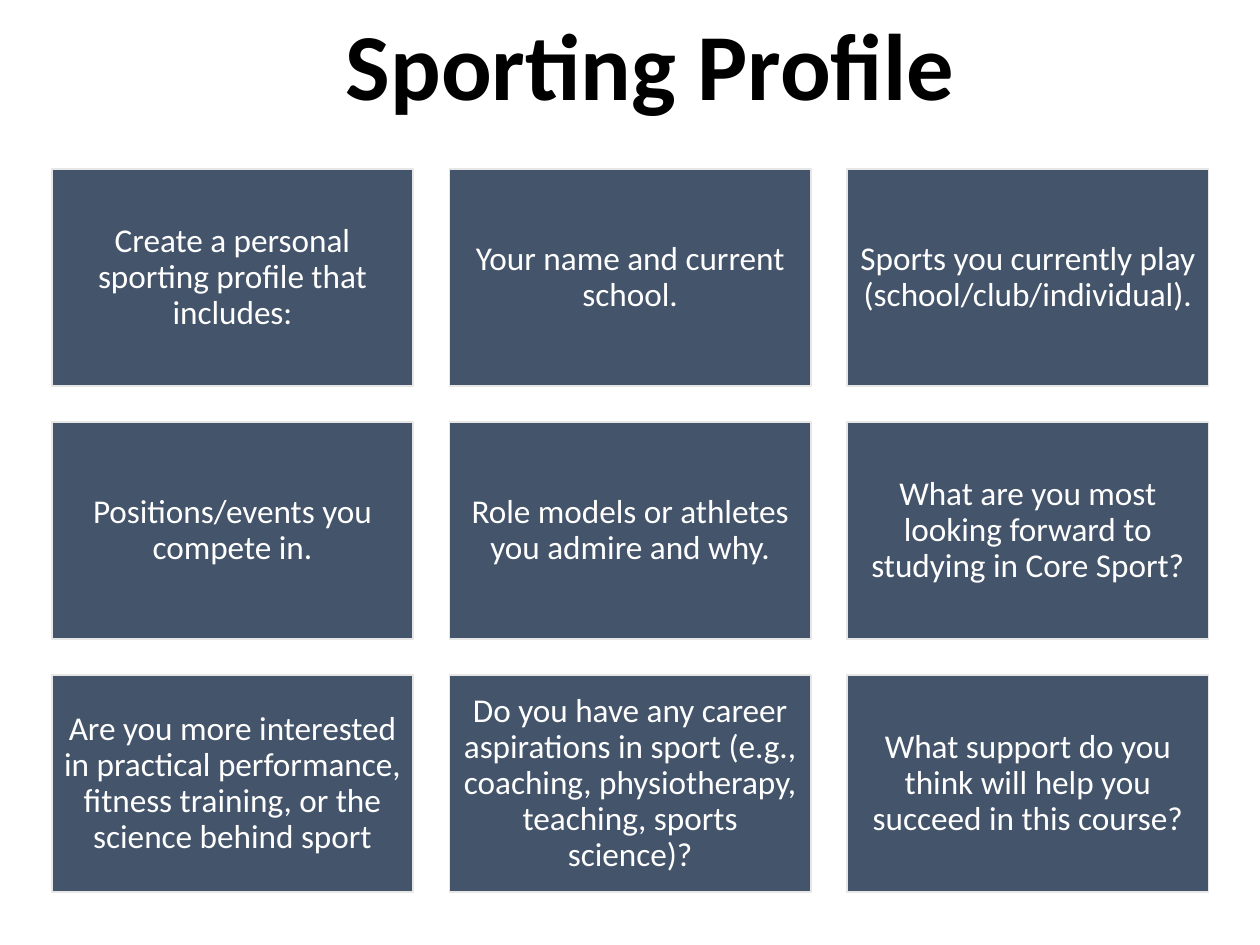
from pptx import Presentation
from pptx.dml.color import RGBColor
from pptx.enum import shapes, text
from pptx.util import Pt

SLATE = RGBColor(0x44, 0x54, 0x6A)
PALE = RGBColor(0xE7, 0xE6, 0xE6)
WHITE = RGBColor(0xFF, 0xFF, 0xFF)
BLACK = RGBColor(0x00, 0x00, 0x00)

COLUMNS, ROWS, GAP = 3, 3, 20.7
PROMPTS = [
    "Create a personal sporting profile that includes:",
    "Your name and current school.",
    "Sports you currently play (school/club/individual).",
    "Positions/events you compete in.",
    "Role models or athletes you admire and why.",
    "What are you most looking forward to studying in Core Sport?",
    "Are you more interested in practical performance, fitness training, "
    "or the science behind sport",
    "Do you have any career aspirations in sport (e.g., coaching, "
    "physiotherapy, teaching, sports science)?",
    "What support do you think will help you succeed in this course?",
]


def set_values(target, values):
    for name, value in values.items():
        setattr(target, name, value)


def write_text(frame, wording, color, font_values):
    frame.word_wrap = True
    para = frame.paragraphs[0]
    para.alignment = text.PP_ALIGN.CENTER
    span = para.add_run()
    span.text = wording
    set_values(span.font, {"name": "Calibri", **font_values})
    span.font.color.rgb = color
    return para


def add_title(page, left, top, width, height):
    box = page.shapes.add_textbox(Pt(left), Pt(top), Pt(width), Pt(height))
    write_text(box.text_frame, "Sporting Profile", BLACK,
               {"size": Pt(54), "bold": True})
    box.text_frame.auto_size = text.MSO_AUTO_SIZE.SHAPE_TO_FIT_TEXT


def add_card(page, left, top, width, height, wording):
    card = page.shapes.add_shape(shapes.MSO_SHAPE.RECTANGLE,
                                 Pt(left), Pt(top), Pt(width), Pt(height))
    card.shadow.inherit = False
    card.fill.solid()
    card.fill.fore_color.rgb = SLATE
    card.line.color.rgb = PALE
    card.line.width = Pt(1)
    frame = card.text_frame
    sides = ("left", "top", "right", "bottom")
    set_values(frame, {f"margin_{side}": Pt(5.7) for side in sides})
    frame.vertical_anchor = text.MSO_ANCHOR.MIDDLE
    para = write_text(frame, wording, WHITE, {"size": Pt(19)})
    para.line_spacing = 0.9


def add_prompt_grid(page, left, top, width, height):
    card_width = (width - GAP * (COLUMNS - 1)) / COLUMNS
    card_height = (height - GAP * (ROWS - 1)) / ROWS
    for index, wording in enumerate(PROMPTS):
        row, column = divmod(index, COLUMNS)
        add_card(page, left + column * (card_width + GAP),
                 top + row * (card_height + GAP),
                 card_width, card_height, wording)


def main():
    deck = Presentation()
    set_values(deck, {"slide_width": Pt(720), "slide_height": Pt(540)})
    page = deck.slides.add_slide(deck.slide_layouts[6])
    add_prompt_grid(page, 29.6, 96.5, 661, 413.3)
    add_title(page, 113.8, 0, 515.5, 72.7)
    deck.save("out.pptx")


if __name__ == "__main__":
    main()
